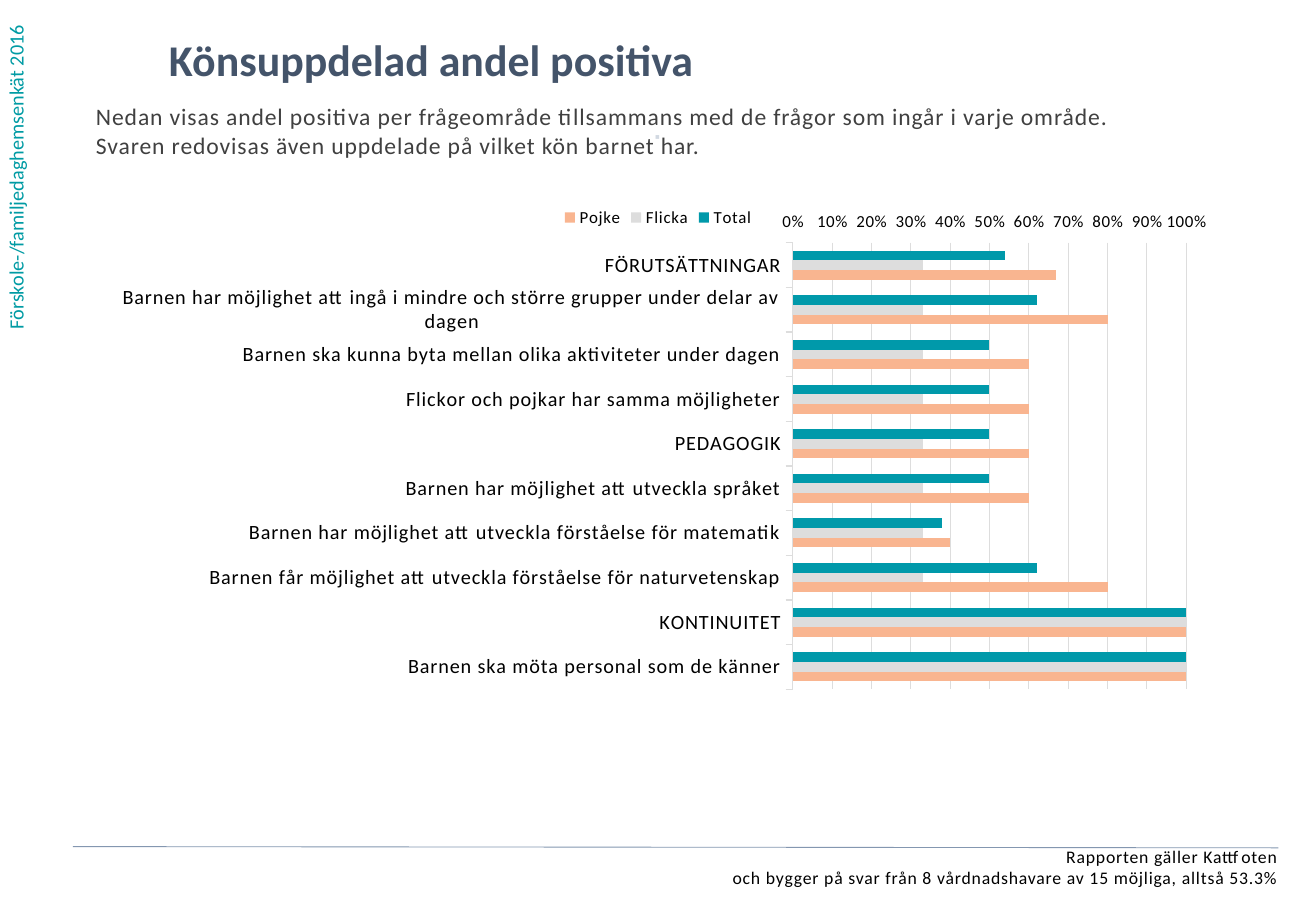
from dataclasses import dataclass

from lxml import etree
from pptx import Presentation
from pptx.chart.data import CategoryChartData
from pptx.dml.color import RGBColor
from pptx.enum.chart import (XL_AXIS_CROSSES, XL_CHART_TYPE, XL_LEGEND_POSITION,
                             XL_TICK_MARK)
from pptx.enum.shapes import MSO_CONNECTOR
from pptx.enum.text import MSO_ANCHOR, PP_ALIGN
from pptx.oxml.ns import qn
from pptx.util import Inches, Pt


@dataclass(frozen=True)
class Theme:
    font: str = "Calibri"
    # Colours
    title: str = "44546A"
    body: str = "404040"
    ink: str = "000000"
    teal: str = "009BA4"
    dot: str = "D2D9E2"
    rule: str = "8497B0"
    grid: str = "DDDDDD"
    total: str = "0099AA"
    girl: str = "DDDDDD"
    boy: str = "F9B590"
    # Type sizes in points
    title_size: float = 26
    body_size: float = 14
    label_size: float = 12
    footer_size: float = 10.5
    chart_size: float = 10
    # Letter spacing in hundredths of a point
    spacing: int = 50


class SlideBuilder:
    def __init__(self, prs, theme):
        self.theme = theme
        self.slide = prs.slides.add_slide(prs.slide_layouts[5])

    def style_font(self, font, size, color, bold=False):
        font.name, font.size, font.bold = self.theme.font, Pt(size), bold
        font.color.rgb = RGBColor.from_string(color)

    def fill_frame(self, s, text, size, color, bold=False, spaced=True, margin=0,
                   align=PP_ALIGN.LEFT, anchor=MSO_ANCHOR.TOP):
        tf = s.text_frame
        tf.word_wrap = True
        tf.vertical_anchor = anchor
        if margin is not None:
            tf.margin_left = tf.margin_right = Inches(margin)
            tf.margin_top = tf.margin_bottom = Inches(margin)
        tf.text = text
        p = tf.paragraphs[0]
        p.alignment = align
        self.style_font(p.font, size, color, bold)
        if spaced:
            self.space_letters(p._p)

    def space_letters(self, element):
        for props in element.iter(qn("a:defRPr")):
            props.set("spc", str(self.theme.spacing))

    def title(self, text, x, y, w, h):
        s = self.slide.shapes.title
        s.left, s.top, s.width, s.height = map(Inches, (x, y, w, h))
        self.fill_frame(s, text, self.theme.title_size, self.theme.title,
                        bold=True, spaced=False)

    def text(self, text, x, y, w, h, size, color, vertical=False, **style):
        s = self.slide.shapes.add_textbox(*map(Inches, (x, y, w, h)))
        self.fill_frame(s, text, size, color, **style)
        if vertical:
            s.text_frame._txBody.bodyPr.set("vert", "vert270")

    def line(self, x1, y1, x2, y2, color, width):
        s = self.slide.shapes.add_connector(
            MSO_CONNECTOR.STRAIGHT, *map(Inches, (x1, y1, x2, y2)))
        s.line.color.rgb = RGBColor.from_string(color)
        s.line.width = Pt(width)
        etree.SubElement(s._element.spPr, qn("a:effectLst"))

    def bar_chart(self, categories, series, x, y, w, h, plot_box):
        t = self.theme
        data = CategoryChartData(number_format="0%")
        data.categories = categories
        for name, values, _ in series:
            data.add_series(name, values)
        chart = self.slide.shapes.add_chart(
            XL_CHART_TYPE.BAR_CLUSTERED, *map(Inches, (x, y, w, h)), data).chart
        chart.has_title = False
        self.style_font(chart.font, t.chart_size, t.ink)

        # Bars
        plot = chart.plots[0]
        plot.gap_width, plot.overlap = 162, 0
        plot.vary_by_categories = False
        for bars, (_, _, color) in zip(plot.series, series):
            bars.format.fill.solid()
            bars.format.fill.fore_color.rgb = RGBColor.from_string(color)

        # Axes
        cat, val = chart.category_axis, chart.value_axis
        cat.reverse_order = True
        cat.crosses = XL_AXIS_CROSSES.MAXIMUM
        val.minimum_scale, val.maximum_scale, val.major_unit = 0, 1, 0.1
        val.has_major_gridlines = True
        val.tick_labels.number_format = "0%;0%"
        val.tick_labels.number_format_is_linked = False
        val.format.line.fill.background()
        for line in (cat.format.line, val.major_gridlines.format.line):
            line.color.rgb = RGBColor.from_string(t.grid)
            line.width = Pt(0.75)
        for axis, size in ((cat, t.label_size), (val, t.chart_size)):
            axis.major_tick_mark = XL_TICK_MARK.OUTSIDE
            axis.minor_tick_mark = XL_TICK_MARK.NONE
            self.style_font(axis.tick_labels.font, size, t.ink)

        # Legend
        chart.has_legend = True
        chart.legend.position = XL_LEGEND_POSITION.TOP
        chart.legend.include_in_layout = False
        self.style_font(chart.legend.font, t.chart_size, t.ink)

        self.space_letters(chart._chartSpace)
        self.place_plot(chart, plot_box)

    def place_plot(self, chart, plot_box):
        area = chart._chartSpace.find(".//" + qn("c:plotArea"))
        for old in area.findall(qn("c:layout")):
            area.remove(old)
        layout = etree.Element(qn("c:layout"))
        area.insert(0, layout)
        manual = etree.SubElement(layout, qn("c:manualLayout"))
        settings = [("layoutTarget", "inner"), ("xMode", "edge"), ("yMode", "edge")]
        for tag, value in settings + list(zip("xywh", plot_box)):
            etree.SubElement(manual, qn("c:" + tag)).set("val", str(value))


THEME = Theme()
QUESTIONS = [
    "FÖRUTSÄTTNINGAR",
    "Barnen har möjlighet att ingå i mindre och större grupper under delar av dagen",
    "Barnen ska kunna byta mellan olika aktiviteter under dagen",
    "Flickor och pojkar har samma möjligheter",
    "PEDAGOGIK",
    "Barnen har möjlighet att utveckla språket",
    "Barnen har möjlighet att utveckla förståelse för matematik",
    "Barnen får möjlighet att utveckla förståelse för naturvetenskap",
    "KONTINUITET",
    "Barnen ska möta personal som de känner",
]
SERIES = [
    ("Total", [0.54, 0.62, 0.5, 0.5, 0.5, 0.5, 0.38, 0.62, 1, 1], THEME.total),
    ("Flicka", [0.33] * 8 + [1, 1], THEME.girl),
    ("Pojke", [0.67, 0.8, 0.6, 0.6, 0.6, 0.6, 0.4, 0.8, 1, 1], THEME.boy),
]


def main():
    prs = Presentation()
    prs.slide_width, prs.slide_height = Inches(10.83), Inches(7.5)
    b = SlideBuilder(prs, THEME)

    # Survey name along the left edge
    b.text("Förskole-/familjedaghemsenkät 2016", -0.02, 0, 0.4, 2.81,
           THEME.label_size, THEME.teal, vertical=True, spaced=False, margin=None)

    # Heading and introduction
    b.title("Könsuppdelad andel positiva", 1.39, 0.27, 8.34, 0.57)
    b.text("Nedan visas andel positiva per frågeområde tillsammans med de frågor "
           "som ingår i varje område.\v"
           "Svaren redovisas även uppdelade på vilket kön barnet har.",
           0.79, 0.84, 9.46, 1.01, THEME.body_size, THEME.body)

    # Footer
    b.text("Rapporten gäller Kattfoten\v"
           "och bygger på svar från 8 vårdnadshavare av 15 möjliga, alltså 53.3%",
           0.12, 6.96, 10.4, 0.35, THEME.footer_size, THEME.ink,
           align=PP_ALIGN.RIGHT, anchor=MSO_ANCHOR.BOTTOM)
    b.text("⋅", 3.87, 1.02, 3.08, 0.39, THEME.label_size, THEME.dot,
           bold=True, align=PP_ALIGN.CENTER)

    # Share of positive answers by gender
    b.bar_chart(QUESTIONS, SERIES, 0.79, 1.6, 9.25, 4.43,
                plot_box=(0.62, 0.09, 0.35, 0.83))
    b.line(0.6, 6.97, 10.52, 6.98, THEME.rule, 0.5)

    prs.save("out.pptx")


if __name__ == "__main__":
    main()
